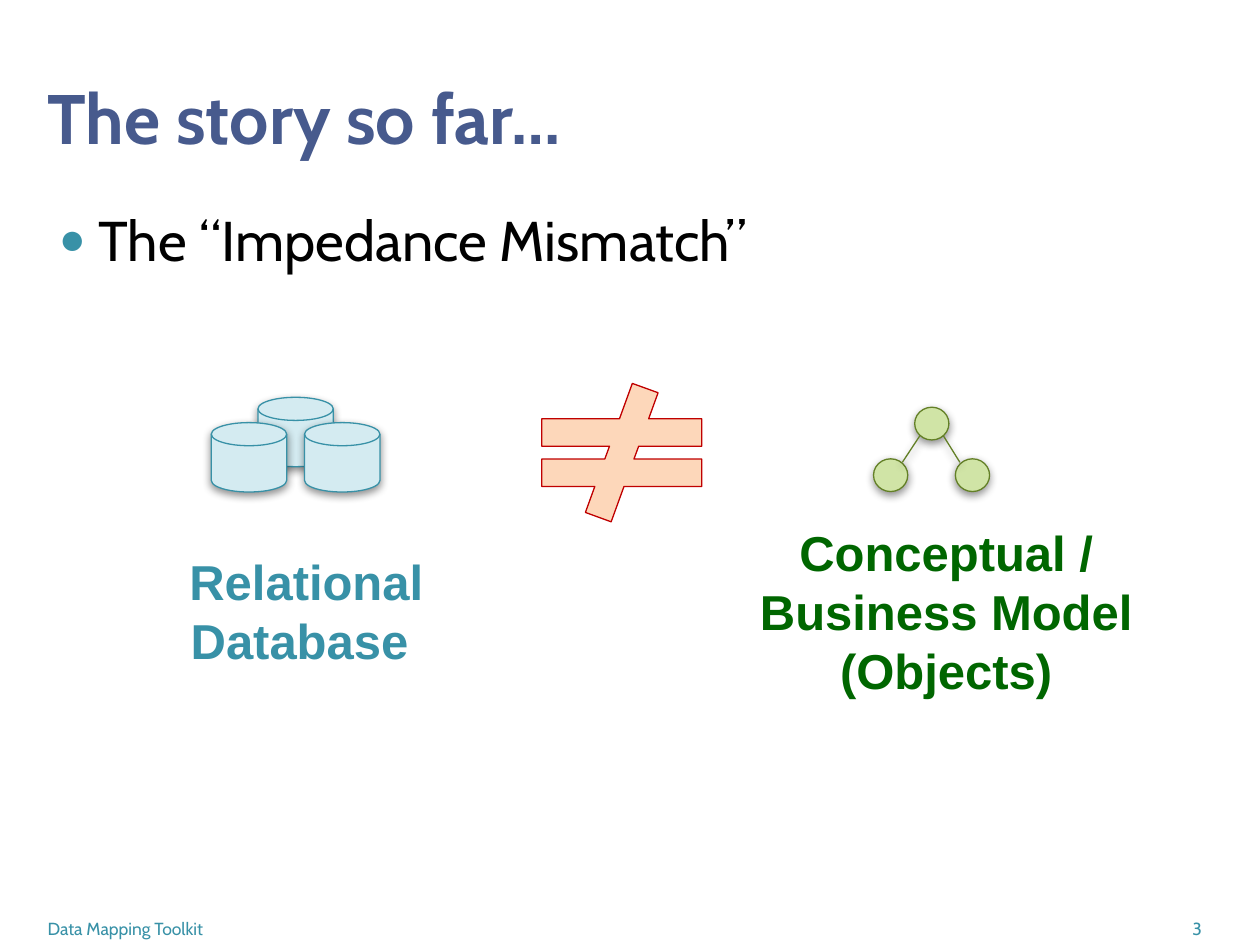
from lxml import etree
from pptx import Presentation
from pptx.dml.color import RGBColor
from pptx.enum.shapes import MSO_CONNECTOR, MSO_SHAPE
from pptx.enum.text import MSO_ANCHOR, PP_ALIGN
from pptx.oxml.ns import qn
from pptx.util import Cm, Pt

LEFT, MID = PP_ALIGN.LEFT, PP_ALIGN.CENTER
TOP, CENTRE, BASE = MSO_ANCHOR.TOP, MSO_ANCHOR.MIDDLE, MSO_ANCHOR.BOTTOM
DISK, BALL, UNEQUAL = MSO_SHAPE.FLOWCHART_MAGNETIC_DISK, MSO_SHAPE.OVAL, MSO_SHAPE.MATH_NOT_EQUAL
STRAIGHT = MSO_CONNECTOR.STRAIGHT

INK = {
    "title": "475A8D", "black": "000000", "teal": "3891A7", "pale": "D4EBF1",
    "green": "006600", "leaf": "D0E4A6", "stem": "638026",
    "peach": "FDD7BA", "red": "C00000",
}


def paint(shape, edge, fill=None, shade=True):
    """Set line, fill and a soft shadow straight below."""
    if fill:
        shape.fill.solid()
        shape.fill.fore_color.rgb = RGBColor.from_string(INK[fill])
    shape.line.color.rgb = RGBColor.from_string(INK[edge])
    shape.line.width = Pt(0.75)
    props = shape._element.spPr
    effects = etree.SubElement(props, qn("a:effectLst"))
    if shade:
        outer = etree.SubElement(effects, qn("a:outerShdw"), blurRad=str(Pt(5)),
                                 dist=str(Pt(2)), dir="5400000", rotWithShape="0")
        tone = etree.SubElement(outer, qn("a:srgbClr"), val=INK["black"])
        etree.SubElement(tone, qn("a:alpha"), val="43000")


def write(box, words, size, font, ink, bold=False, align=LEFT, anchor=TOP, bullet=False):
    """Add a text box with one run."""
    shape = slide.shapes.add_textbox(*map(Cm, box))
    frame = shape.text_frame
    frame.word_wrap = True
    frame.vertical_anchor = anchor
    para = frame.paragraphs[0]
    para.alignment = align
    if bullet:
        props = para._p.get_or_add_pPr()
        props.set("marL", str(Cm(1.02)))
        props.set("indent", str(Cm(-0.79)))
        tint = etree.SubElement(props, qn("a:buClr"))
        etree.SubElement(tint, qn("a:srgbClr"), val=INK["teal"])
        etree.SubElement(props, qn("a:buSzPct"), val="80000")
        etree.SubElement(props, qn("a:buFont"), typeface="Arial")
        etree.SubElement(props, qn("a:buChar"), char="●")
    run = para.add_run()
    run.text = words
    run.font.size = Pt(size)
    run.font.name = font
    run.font.bold = bold
    run.font.color.rgb = RGBColor.from_string(INK[ink])


deck = Presentation()
deck.slide_width, deck.slide_height = Cm(25.4), Cm(19.05)
slide = deck.slides.add_slide(deck.slide_layouts[6])

# Title, bullet and footer
write((0.71, 0.76, 24.1, 3.18), "The story so far…", 40, "Cabin", "title", True, anchor=CENTRE)
write((0.71, 4.01, 24.1, 14.1), "The “Impedance Mismatch”", 32, "Cabin", "black", bullet=True)
write((0.71, 18.31, 17.6, 0.74), "Data Mapping Toolkit", 10, "Cabin", "teal", anchor=BASE)
write((23.5, 18.31, 1.27, 0.74), "3", 10, "Cabin", "teal", align=MID, anchor=BASE)

# Database disks and object nodes, each in a group
icons = [
    (DISK, 1.52, 1.4, "teal", "pale", [(5.2, 8.01), (4.26, 8.52), (6.14, 8.52)]),
    (BALL, 0.69, 0.66, "stem", "leaf", [(18.44, 8.21), (17.61, 9.25), (19.26, 9.25)]),
]
for kind, wide, high, edge, fill, spots in icons:
    group = slide.shapes.add_group_shape()
    for x, y in spots:
        part = group.shapes.add_shape(kind, Cm(x), Cm(y), Cm(wide), Cm(high))
        paint(part, edge, fill)

# Branches from the lower nodes to the top node
for low, high in [(18.19, 18.54), (19.35, 19.02)]:
    branch = group.shapes.add_connector(STRAIGHT, Cm(low), Cm(9.32), Cm(high), Cm(8.79))
    paint(branch, "stem")

# Labels
write((3.51, 11, 5.33, 2.64), "Relational Database ", 28, "Arial", "teal", True, MID)
write((14.48, 10.41, 9.19, 3.84), "Conceptual / Business Model (Objects)",
      28, "Arial", "green", True, MID)

# Not-equal sign
sign = slide.shapes.add_shape(UNEQUAL, Cm(10.34), Cm(7.73), Cm(4.39), Cm(2.79))
for i, value in enumerate((0.198, 66, 0.093)):
    sign.adjustments[i] = value
paint(sign, "red", "peach", shade=False)

deck.save("out.pptx")
